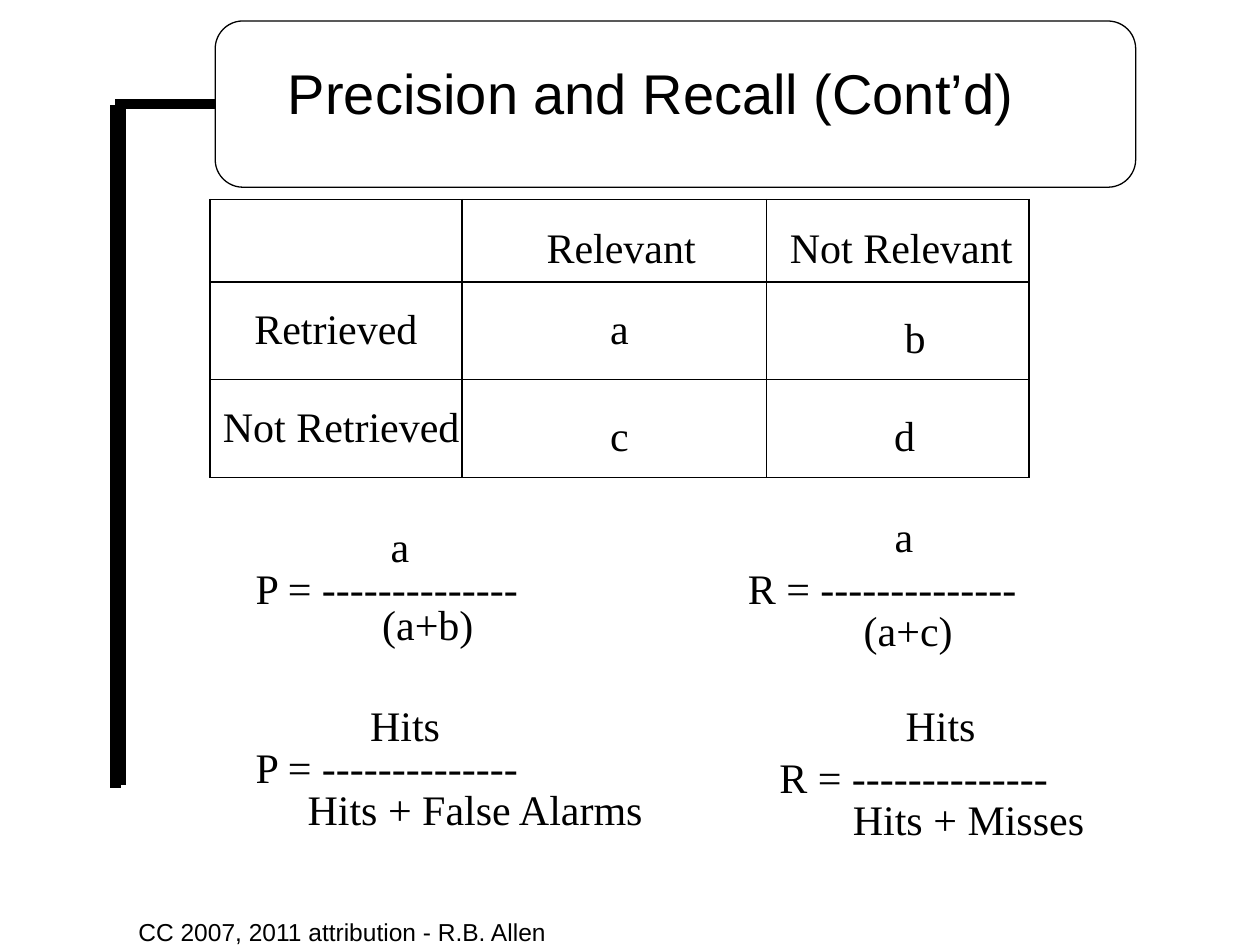
from lxml.etree import SubElement
from pptx import Presentation
from pptx.dml.color import RGBColor
from pptx.enum.shapes import MSO_CONNECTOR, MSO_SHAPE
from pptx.enum.text import MSO_ANCHOR, PP_ALIGN
from pptx.oxml.ns import qn
from pptx.util import Pt

COLORS = {"ink": "000000"}
INK = RGBColor.from_string(COLORS["ink"])
SERIF, SANS = "Times New Roman", "Arial"

# Cell: text, then how far right and down it sits from the cell's centre
CONTINGENCY = [
    [("", 0, 0), ("Relevant", 4, 5), ("Not Relevant", 2, 5)],
    [("Retrieved", 0, 0), ("a", 3, 0), ("b", 10, 5)],
    [("Not Retrieved", 3, 0), ("c", 3, 5), ("d", 4, 5)],
]
COLUMN_WIDTHS = [144, 174, 150]
ROW_HEIGHTS = [47, 56, 56]

# Formula part: text, left, top, width
BAR = "-" * 14
FORMULAS = [
    ("a", 216, 294, 25), (f"P = {BAR}", 138, 318, 166), ("(a+b)", 211, 338.5, 67),
    ("a", 504, 288, 25), (f"R = {BAR}", 420, 318, 168), ("(a+c)", 486, 342, 66),
    ("Hits", 204, 396, 55), (f"P = {BAR}", 138, 420, 166),
    ("Hits + False Alarms", 168, 444, 207),
    ("Hits", 510, 396, 55), (f"R = {BAR}", 438, 426, 168),
    ("Hits + Misses", 480, 450, 147),
]


def write(paragraph, text, size, font, align):
    paragraph.alignment = align
    run = paragraph.add_run()
    run.text = text
    run.font.size = Pt(size)
    run.font.name = font
    run.font.color.rgb = INK


def add_label(slide, text, left, top, width, height=36, size=24, font=SERIF,
              align=PP_ALIGN.CENTER):
    label = slide.shapes.add_textbox(Pt(left), Pt(top), Pt(width), Pt(height))
    label.text_frame.word_wrap = False
    write(label.text_frame.paragraphs[0], text, size, font, align)


def add_bar(slide, x1, y1, x2, y2):
    bar = slide.shapes.add_connector(
        MSO_CONNECTOR.STRAIGHT, Pt(x1), Pt(y1), Pt(x2), Pt(y2))
    bar.line.color.rgb = INK
    bar.line.width = Pt(6)
    SubElement(bar._element.spPr, qn("a:effectLst"))
    return bar


def add_frame(slide):
    """Rounded title box with the heavy bracket that hangs from its left side."""
    title_box = slide.shapes.add_shape(
        MSO_SHAPE.FLOWCHART_ALTERNATE_PROCESS, Pt(123), Pt(12), Pt(526), Pt(95))
    title_box.shadow.inherit = False
    title_box.fill.background()
    title_box.line.color.rgb = INK
    title_box.line.width = Pt(0.75)
    add_bar(slide, 69, 448.5, 69, 59)
    add_bar(slide, 66, 450, 66, 60)
    add_bar(slide, 66, 59.5, 123, 59.5).end_connect(title_box, 1)


def set_title(slide, text):
    title = slide.shapes.title
    title.left, title.top, title.width, title.height = Pt(84), Pt(18), Pt(576), Pt(69)
    title.text_frame.vertical_anchor = MSO_ANCHOR.MIDDLE
    write(title.text_frame.paragraphs[0], text, 32, SANS, PP_ALIGN.CENTER)


def add_borders(cell):
    properties = cell._tc.get_or_add_tcPr()
    for side in ("lnL", "lnR", "lnT", "lnB"):
        border = SubElement(properties, qn(f"a:{side}"), w=str(Pt(1)))
        fill = SubElement(border, qn("a:solidFill"))
        SubElement(fill, qn("a:srgbClr"), val=COLORS["ink"])


def add_contingency_table(slide):
    table = slide.shapes.add_table(
        len(ROW_HEIGHTS), len(COLUMN_WIDTHS), Pt(120), Pt(114),
        Pt(sum(COLUMN_WIDTHS)), Pt(sum(ROW_HEIGHTS))).table
    table.first_row = table.horz_banding = False
    for column, width in zip(table.columns, COLUMN_WIDTHS):
        column.width = Pt(width)
    for row, height, entries in zip(table.rows, ROW_HEIGHTS, CONTINGENCY):
        row.height = Pt(height)
        for cell, (text, right, down) in zip(row.cells, entries):
            add_borders(cell)
            cell.fill.background()
            cell.vertical_anchor = MSO_ANCHOR.MIDDLE
            # A margin on one side moves centred text by half of it
            cell.margin_left, cell.margin_right = Pt(2 * right), Pt(0)
            cell.margin_top, cell.margin_bottom = Pt(2 * down), Pt(0)
            if text:
                write(cell.text_frame.paragraphs[0], text, 24, SERIF, PP_ALIGN.CENTER)


def main():
    presentation = Presentation()
    presentation.slide_width, presentation.slide_height = Pt(720), Pt(540)
    slide = presentation.slides.add_slide(presentation.slide_layouts[5])
    add_frame(slide)
    set_title(slide, "Precision and Recall (Cont’d)")
    add_contingency_table(slide)
    for text, left, top, width in FORMULAS:
        add_label(slide, text, left, top, width)
    add_label(slide, "CC 2007, 2011 attribution - R.B. Allen", 72, 520.5, 402,
              height=19.5, size=14, font=SANS, align=PP_ALIGN.LEFT)
    presentation.save("out.pptx")


if __name__ == "__main__":
    main()
